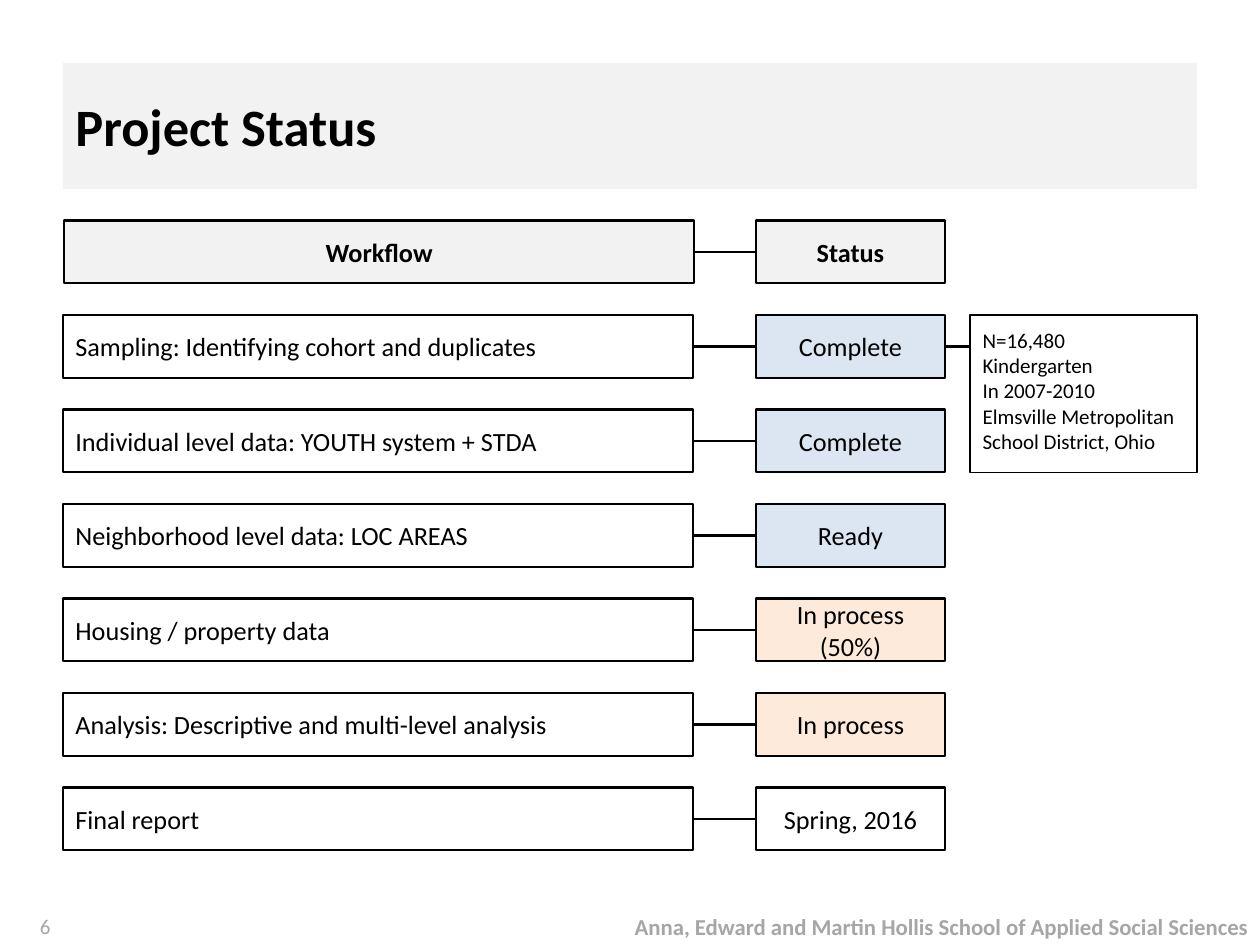
from dataclasses import dataclass

import pptx
import pptx.dml.color
import pptx.enum.shapes
import pptx.enum.text
import pptx.oxml.ns
import pptx.util
from lxml import etree
from pptx.util import Inches

ALIGN = pptx.enum.text.PP_ALIGN
ANCHOR = pptx.enum.text.MSO_ANCHOR
BLACK, WHITE, GRAY = "000000", "FFFFFF", "F2F2F2"
BLUE, ORANGE, FOOTER = "DCE6F2", "FDEADA", "A6A6A6"


@dataclass
class Step:
    work: str
    status: str
    fill: str


STEPS = [
    Step("Sampling: Identifying cohort and duplicates", "Complete", BLUE),
    Step("Individual level data: YOUTH system + STDA", "Complete", BLUE),
    Step("Neighborhood level data: LOC AREAS", "Ready", BLUE),
    Step("Housing / property data", "In process (50%)", ORANGE),
    Step("Analysis: Descriptive and multi-level analysis", "In process", ORANGE),
    Step("Final report", "Spring, 2016", WHITE),
]
NOTE = ["N=16,480", "Kindergarten", "In 2007-2010",
        "Elmsville Metropolitan School District, Ohio"]
TOP, PITCH, ROW_H = 1.75, 0.75, 0.5
WORK_X, WORK_W, STATUS_X, STATUS_W = 0.5, 5, 6, 1.5


def rgb(color: str) -> pptx.dml.color.RGBColor:
    return pptx.dml.color.RGBColor.from_string(color)


def write(sp, lines: list[str], size: float, color: str = BLACK, bold: bool = False,
          align=ALIGN.LEFT, anchor=ANCHOR.MIDDLE) -> None:
    tf = sp.text_frame
    tf.word_wrap = True
    tf.vertical_anchor = anchor
    tf.text = "\n".join(lines)
    for p in tf.paragraphs:
        p.alignment = align
        p.font.name = "Calibri"
        p.font.size = pptx.util.Pt(size)
        p.font.bold = bold
        p.font.color.rgb = rgb(color)


def add_label(s, x: float, y: float, w: float, h: float, text: str, size: float,
              bold: bool = False) -> None:
    sp = s.shapes.add_textbox(Inches(x), Inches(y), Inches(w), Inches(h))
    write(sp, [text], size, FOOTER, bold, ALIGN.RIGHT)


def add_box(s, x: float, y: float, w: float, h: float, fill: str, line_pt: float = 1.25):
    """Add a rectangle; a line width of 0 leaves out the outline."""
    sp = s.shapes.add_shape(pptx.enum.shapes.MSO_SHAPE.RECTANGLE,
                            Inches(x), Inches(y), Inches(w), Inches(h))
    sp.shadow.inherit = False
    sp.fill.solid()
    sp.fill.fore_color.rgb = rgb(fill)
    if line_pt:
        sp.line.color.rgb = rgb(BLACK)
        sp.line.width = pptx.util.Pt(line_pt)
        tf = sp.text_frame
        tf.margin_left = tf.margin_right = tf.margin_top = tf.margin_bottom = Inches(0.1)
    else:
        sp.line.fill.background()
    return sp


def add_line(s, x1: float, x2: float, y: float, begin, end=None) -> None:
    """Draw a line from the right side of begin to the left side of end, if given."""
    line = s.shapes.add_connector(pptx.enum.shapes.MSO_CONNECTOR.STRAIGHT,
                                  Inches(x1), Inches(y), Inches(x2), Inches(y))
    line.begin_connect(begin, 3)
    if end is not None:
        line.end_connect(end, 1)
    line.line.color.rgb = rgb(BLACK)
    line.line.width = pptx.util.Pt(1.25)
    etree.SubElement(line._element.spPr, pptx.oxml.ns.qn("a:effectLst"))


def add_row(s, row: int, step: Step, header: bool = False):
    """Add a work box joined to its status box, and return the status box."""
    y = TOP + row * PITCH
    x = WORK_X + 0.01 if header else WORK_X
    work = add_box(s, x, y, WORK_W, ROW_H, GRAY if header else WHITE)
    write(work, [step.work], 15, bold=header, align=ALIGN.CENTER if header else ALIGN.LEFT)
    status = add_box(s, STATUS_X, y, STATUS_W, ROW_H, step.fill)
    write(status, [step.status], 15, bold=header, align=ALIGN.CENTER)
    add_line(s, x + WORK_W, STATUS_X, y + ROW_H / 2, work, status)
    return status


def main() -> None:
    prs = pptx.Presentation()
    prs.slide_width, prs.slide_height = Inches(10), Inches(7.5)
    s = prs.slides.add_slide(prs.slide_layouts[6])

    add_label(s, 4, 7.2, 6, 0.3,
              "Anna, Edward and Martin Hollis School of Applied Social Sciences", 13, True)
    add_label(s, 0, 7.2, 0.5, 0.3, "6", 12)
    title = add_box(s, 0.5, 0.5, 9, 1, GRAY, line_pt=0)
    write(title, ["Project Status"], 30, bold=True)

    add_row(s, 0, Step("Workflow", "Status", GRAY), header=True)
    statuses = [add_row(s, row, step) for row, step in enumerate(STEPS, 1)]

    note_x, note_y = 7.7, TOP + PITCH
    add_line(s, STATUS_X + STATUS_W, note_x, note_y + ROW_H / 2, statuses[0])
    note = add_box(s, note_x, note_y, 1.8, PITCH + ROW_H, WHITE, line_pt=1)
    write(note, NOTE, 12, anchor=ANCHOR.TOP)

    prs.save("out.pptx")


if __name__ == "__main__":
    main()
